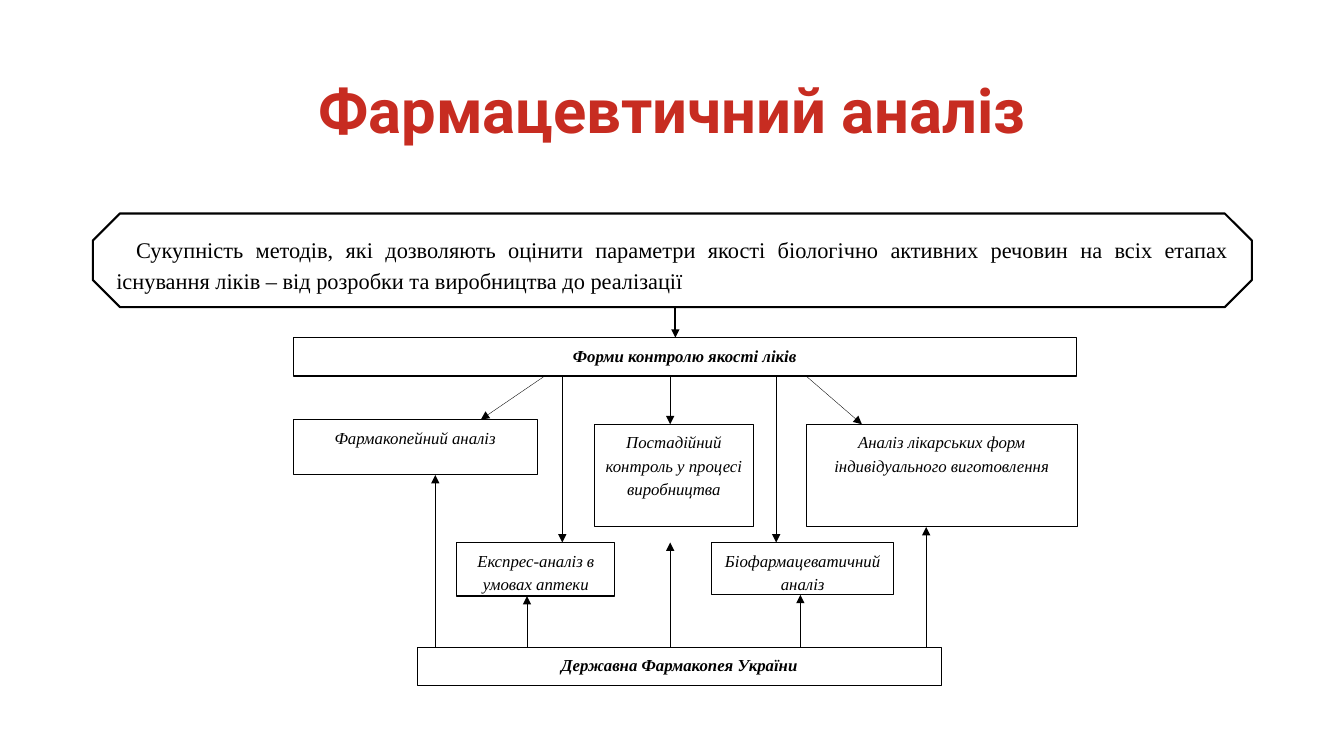
from lxml import etree
from pptx import Presentation
from pptx.dml.color import RGBColor
from pptx.enum.shapes import MSO_CONNECTOR, MSO_SHAPE
from pptx.enum.text import MSO_ANCHOR, PP_ALIGN
from pptx.oxml.ns import qn
from pptx.util import Cm, Pt

RECT, OCTAGON = MSO_SHAPE.RECTANGLE, MSO_SHAPE.OCTAGON
STRAIGHT = MSO_CONNECTOR.STRAIGHT
CENTER, JUSTIFY = PP_ALIGN.CENTER, PP_ALIGN.JUSTIFY
TOP, MIDDLE = MSO_ANCHOR.TOP, MSO_ANCHOR.MIDDLE

BLACK, WHITE, RED = "000000", "FFFFFF", "C72C21"
SERIF = "Times New Roman"

TITLE = ("Фармацевтичний аналіз", (2.34, 1.02, 29.21, 3.68))
DEFINITION = (
    "Сукупність методів, які дозволяють оцінити параметри якості біологічно "
    "активних речовин на всіх етапах існування ліків – від розробки та "
    "виробництва до реалізації",
    (2.34, 5.38, 29.21, 2.36),
)
BARS = {
    "control": ("Форми контролю якості ліків", (7.39, 8.51, 19.74, 0.97)),
    "state": ("Державна Фармакопея України", (10.52, 16.31, 13.21, 0.97)),
}
FORMS = {
    "pharmacopoeia": ("Фармакопейний аналіз", (7.39, 10.57, 6.15, 1.4)),
    "stages": ("Постадійний контроль у процесі виробництва", (14.99, 10.69, 3.99, 2.59)),
    "individual": ("Аналіз лікарських форм індивідуального виготовлення", (20.32, 10.69, 6.83, 2.59)),
    "express": ("Експрес-аналіз в умовах аптеки", (11.51, 13.67, 3.99, 1.35)),
    "biopharm": ("Біофармацеватичний аналіз", (17.93, 13.67, 4.6, 1.32)),
}
DOWN = [
    ("pharmacopoeia", 13.72, 12.12),
    ("express", 14.17, 14.17),
    ("stages", 16.89, 16.89),
    ("biopharm", 19.56, 19.56),
    ("individual", 20.32, 21.72),
]
UP = [("pharmacopoeia", 10.97), ("express", 13.28), ("biopharm", 20.17), ("individual", 23.34)]
MIDDLE_X = 16.89
DEFINITION_X = 17.02


def rgb(value):
    return RGBColor.from_string(value)


def write(sp, text, size, font=SERIF, color=BLACK, bold=False, italic=False,
          align=CENTER, anchor=TOP, spacing=1.15):
    tf = sp.text_frame
    tf.word_wrap = True
    tf.vertical_anchor = anchor
    tf.text = text
    p = tf.paragraphs[0]
    p.alignment = align
    p.line_spacing = spacing
    r = p.runs[0]
    r.font.name, r.font.size = font, Pt(size)
    r.font.bold, r.font.italic = bold, italic
    r.font.color.rgb = rgb(color)
    return p


def add_box(s, box, width, kind=RECT):
    sp = s.shapes.add_shape(kind, *map(Cm, box))
    sp.shadow.inherit = False
    sp.fill.solid()
    sp.fill.fore_color.rgb = rgb(WHITE)
    sp.line.color.rgb = rgb(BLACK)
    sp.line.width = Pt(width)
    return sp


def add_arrow(s, x1, y1, x2, y2, width=0.25):
    line = s.shapes.add_connector(STRAIGHT, Cm(x1), Cm(y1), Cm(x2), Cm(y2))
    line.line.color.rgb = rgb(BLACK)
    line.line.width = Pt(width)
    etree.SubElement(line.line._get_or_add_ln(), qn("a:tailEnd"), type="triangle")
    etree.SubElement(line._element.spPr, qn("a:effectLst"))


def bottom(box):
    return box[1] + box[3]


def main():
    prs = Presentation()
    prs.slide_width, prs.slide_height = Cm(33.87), Cm(19.05)
    s = prs.slides.add_slide(prs.slide_layouts[6])

    text, box = TITLE
    write(s.shapes.add_textbox(*map(Cm, box)), text, 44, "Roboto", RED,
          bold=True, anchor=MIDDLE, spacing=0.9)

    text, box = DEFINITION
    sp = add_box(s, box, 1.5, OCTAGON)
    sp.adjustments[0] = 0.29
    p = write(sp, text, 16, align=JUSTIFY)
    p._p.get_or_add_pPr().set("indent", str(Cm(0.5)))

    for text, box in BARS.values():
        write(add_box(s, box, 1), text, 12, bold=True, italic=True)
    for text, box in FORMS.values():
        write(add_box(s, box, 0.75), text, 12, italic=True)

    control, state = BARS["control"][1], BARS["state"][1]
    add_arrow(s, DEFINITION_X, bottom(DEFINITION[1]), DEFINITION_X, control[1], 1.5)
    for name, x1, x2 in DOWN:
        add_arrow(s, x1, bottom(control), x2, FORMS[name][1][1])
    for name, x in UP:
        add_arrow(s, x, state[1], x, bottom(FORMS[name][1]))
    add_arrow(s, MIDDLE_X, state[1], MIDDLE_X, FORMS["express"][1][1])

    prs.save("out.pptx")


if __name__ == "__main__":
    main()
